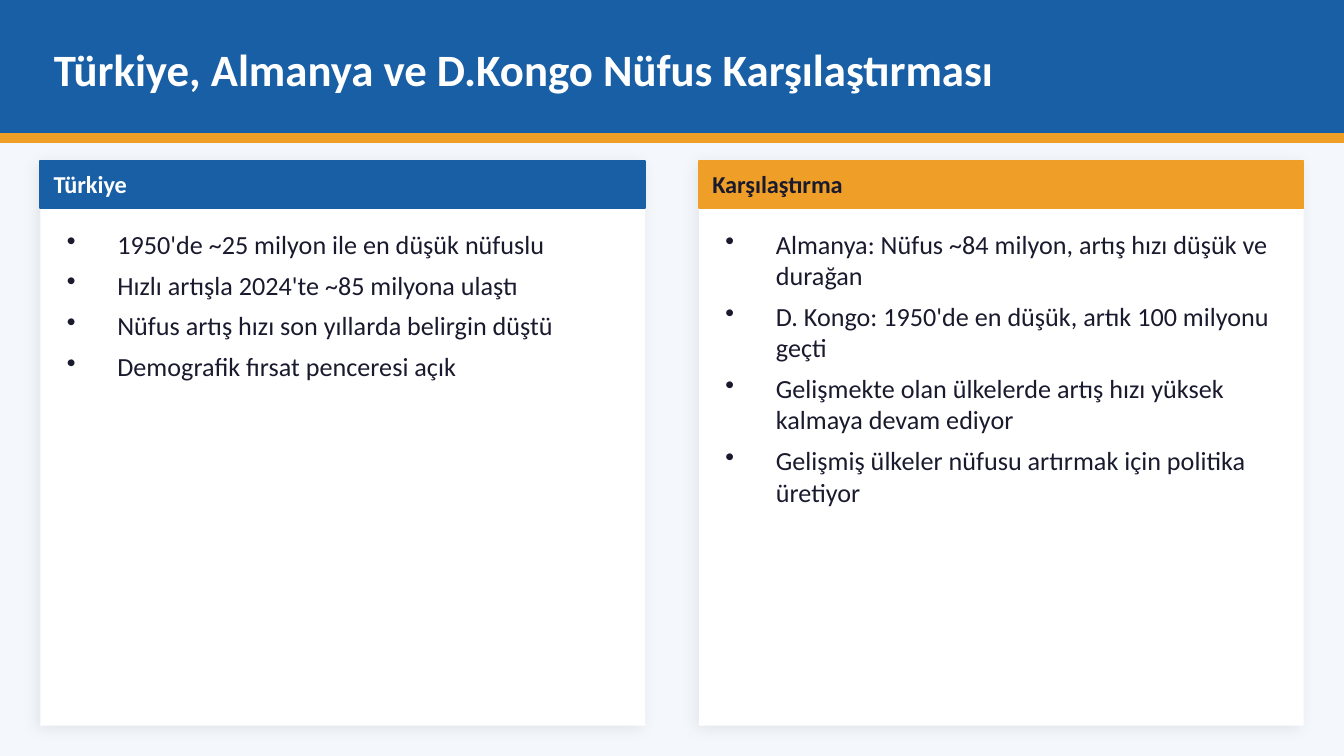
from lxml.etree import SubElement
from pptx import Presentation
from pptx.dml.color import RGBColor
from pptx.enum.shapes import MSO_SHAPE
from pptx.enum.text import MSO_ANCHOR, MSO_AUTO_SIZE, PP_ALIGN
from pptx.oxml import parse_xml
from pptx.oxml.ns import nsdecls, qn
from pptx.util import Inches, Pt

BLUE = RGBColor(0x18, 0x5F, 0xA5)
ORANGE = RGBColor(0xEF, 0x9F, 0x27)
WHITE = RGBColor(0xFF, 0xFF, 0xFF)
INK = RGBColor(0x1A, 0x1A, 0x2E)
PALE = RGBColor(0xF4, 0xF7, 0xFC)

WIDTH = 10
HEIGHT = WIDTH * 9 / 16
MARGIN, GUTTER, PAD = 0.3, 0.4, 0.1
CARD_WIDTH = (WIDTH - 2 * MARGIN - GUTTER) / 2
CARD_TOP, CARD_HEIGHT, HEADER_HEIGHT = 1.2, 4.2, 0.35
INDENT = Pt(27)

COLUMNS = [
    ("Türkiye", BLUE, WHITE, [
        "1950'de ~25 milyon ile en düşük nüfuslu",
        "Hızlı artışla 2024'te ~85 milyona ulaştı",
        "Nüfus artış hızı son yıllarda belirgin düştü",
        "Demografik fırsat penceresi açık",
    ]),
    ("Karşılaştırma", ORANGE, INK, [
        "Almanya: Nüfus ~84 milyon, artış hızı düşük ve durağan",
        "D. Kongo: 1950'de en düşük, artık 100 milyonu geçti",
        "Gelişmekte olan ülkelerde artış hızı yüksek kalmaya devam ediyor",
        "Gelişmiş ülkeler nüfusu artırmak için politika üretiyor",
    ]),
]

prs = Presentation()
prs.slide_width, prs.slide_height = Inches(WIDTH), Inches(HEIGHT)
slide = prs.slides.add_slide(prs.slide_layouts[5])
slide.background.fill.solid()
slide.background.fill.fore_color.rgb = PALE


def add_panel(left, top, width, height, color, outlined=True):
    panel = slide.shapes.add_shape(
        MSO_SHAPE.RECTANGLE, Inches(left), Inches(top), Inches(width), Inches(height))
    panel.shadow.inherit = False
    panel.fill.solid()
    panel.fill.fore_color.rgb = color
    if outlined:
        panel.line.color.rgb = color
        panel.line.width = Pt(1)
    else:
        panel.line.fill.background()
    return panel


def style_heading(heading, text, size, color):
    frame = heading.text_frame
    frame.text = text
    frame.word_wrap = True
    frame.auto_size = MSO_AUTO_SIZE.NONE
    frame.vertical_anchor = MSO_ANCHOR.MIDDLE
    frame.margin_left = frame.margin_right = frame.margin_top = frame.margin_bottom = 0
    paragraph = frame.paragraphs[0]
    paragraph.alignment = PP_ALIGN.LEFT
    font = paragraph.runs[0].font
    font.name, font.size, font.bold = "Calibri", Pt(size), True
    font.color.rgb = color


add_panel(0, 0, WIDTH, 1, BLUE)
add_panel(0, 1, WIDTH, 0.06, ORANGE)

title = slide.shapes.title
title.left, title.top = Inches(MARGIN + PAD), Inches(0.1)
title.width, title.height = Inches(WIDTH - 2 * (MARGIN + PAD)), Inches(0.82)
style_heading(title, "Türkiye, Almanya ve D.Kongo Nüfus Karşılaştırması", 24, WHITE)
title.element.getparent().append(title.element)

for column, (heading, header_color, heading_color, points) in enumerate(COLUMNS):
    left = MARGIN + column * (CARD_WIDTH + GUTTER)
    text_left, text_width = Inches(left + PAD), Inches(CARD_WIDTH - 2 * PAD)

    card = add_panel(left, CARD_TOP, CARD_WIDTH, CARD_HEIGHT, WHITE, outlined=False)
    effects = card.element.spPr.find(qn("a:effectLst"))
    effects.append(parse_xml(
        f'<a:outerShdw {nsdecls("a")} blurRad="{Pt(8)}" dist="{Pt(2)}" dir="{135 * 60000}"'
        ' algn="bl" rotWithShape="0"><a:srgbClr val="000000"><a:alpha val="8000"/>'
        '</a:srgbClr></a:outerShdw>'))

    add_panel(left, CARD_TOP, CARD_WIDTH, HEADER_HEIGHT, header_color)
    label = slide.shapes.add_textbox(text_left, Inches(CARD_TOP + 0.02), text_width, Inches(0.3))
    style_heading(label, heading, 13, heading_color)

    body = slide.shapes.add_textbox(
        text_left, Inches(CARD_TOP + HEADER_HEIGHT + PAD), text_width, Inches(3.6))
    body.text_frame.word_wrap = True
    body.text_frame.text = "\n".join(points)
    for paragraph in body.text_frame.paragraphs:
        paragraph.space_after = Pt(5)
        properties = paragraph._p.get_or_add_pPr()
        properties.set("marL", str(INDENT))
        properties.set("indent", str(-INDENT))
        SubElement(properties, qn("a:buSzPct"), val="100000")
        SubElement(properties, qn("a:buChar"), char="•")
        paragraph.font.size = Pt(14)
        font = paragraph.runs[0].font
        font.name, font.size = "Calibri", Pt(14)
        font.color.rgb = INK

prs.save("out.pptx")
